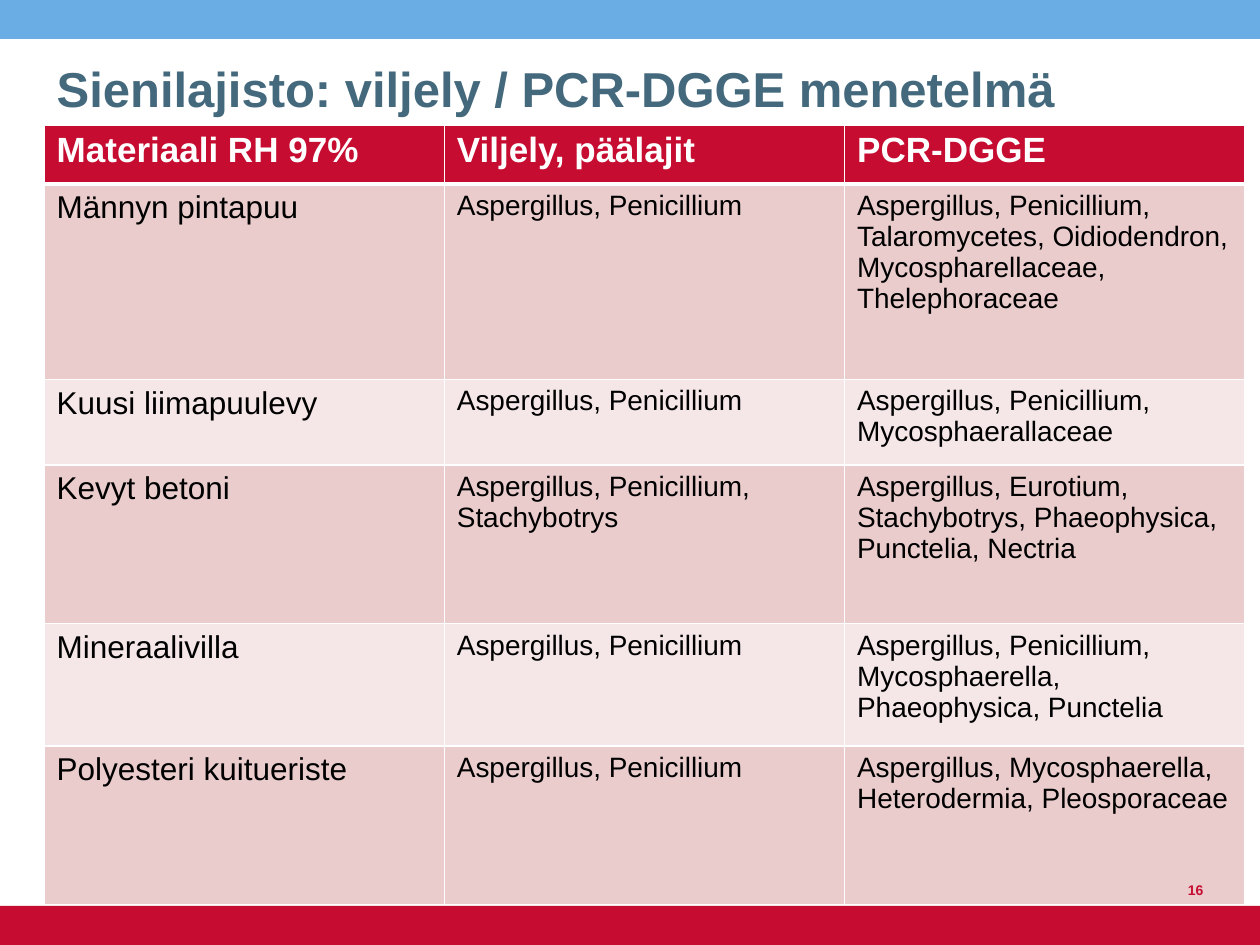
"""Builds a slide comparing fungal species found by culture and by PCR-DGGE."""
from lxml.etree import SubElement
from pptx import Presentation
from pptx.dml.color import RGBColor
from pptx.enum.shapes import MSO_SHAPE
from pptx.enum.text import MSO_ANCHOR, MSO_AUTO_SIZE, PP_ALIGN
from pptx.oxml.ns import qn
from pptx.util import Inches, Pt

RED, BLUE, SLATE = "C60C30", "6AADE4", "44697D"
WHITE, BLACK = "FFFFFF", "000000"
BANDS = ("EACCCD", "F5E7E8")
ROWS = [
    ("Materiaali RH 97%", "Viljely, päälajit", "PCR-DGGE"),
    ("Männyn pintapuu", "Aspergillus, Penicillium",
     "Aspergillus, Penicillium, Talaromycetes, Oidiodendron, "
     "Mycospharellaceae, Thelephoraceae"),
    ("Kuusi liimapuulevy", "Aspergillus, Penicillium",
     "Aspergillus, Penicillium, Mycosphaerallaceae"),
    ("Kevyt betoni", "Aspergillus, Penicillium, Stachybotrys",
     "Aspergillus, Eurotium, Stachybotrys, Phaeophysica, Punctelia, Nectria"),
    ("Mineraalivilla", "Aspergillus, Penicillium",
     "Aspergillus, Penicillium, Mycosphaerella, Phaeophysica, Punctelia"),
    ("Polyesteri kuitueriste", "Aspergillus, Penicillium",
     "Aspergillus, Mycosphaerella, Heterodermia, Pleosporaceae"),
]
ROW_HEIGHTS = (6.27, 20.67, 9.07, 16.8, 12.93, 16.8)


def rgb(value):
    return RGBColor.from_string(value)


class Deck:
    def __init__(self, font="Arial"):
        self.font = font
        self.prs = Presentation()
        self.prs.slide_width, self.prs.slide_height = Inches(10), Inches(7.5)
        self.s = self.prs.slides.add_slide(self.prs.slide_layouts[5])

    def x(self, share):
        return int(self.prs.slide_width * share / 100)

    def y(self, share):
        return int(self.prs.slide_height * share / 100)

    def box(self, left, top, width, height):
        return self.x(left), self.y(top), self.x(width), self.y(height)

    def set_text(self, tf, text, size, color, bold=False, align=PP_ALIGN.LEFT):
        tf.text = text
        tf.word_wrap = True
        p = tf.paragraphs[0]
        p.alignment = align
        f = p.runs[0].font
        f.name, f.size, f.bold = self.font, Pt(size), bold
        f.color.rgb = rgb(color)

    def bar(self, top, height, color):
        sp = self.s.shapes.add_shape(MSO_SHAPE.RECTANGLE, *self.box(0, top, 100, height))
        sp.shadow.inherit = False
        sp.fill.solid()
        sp.fill.fore_color.rgb = rgb(color)
        sp.line.fill.background()

    def title(self, text, *place):
        sp = self.s.shapes.title
        sp.left, sp.top, sp.width, sp.height = self.box(*place)
        self.set_text(sp.text_frame, text, 28, SLATE, bold=True)
        sp.text_frame.auto_size = MSO_AUTO_SIZE.NONE
        sp.text_frame.vertical_anchor = MSO_ANCHOR.BOTTOM

    def number(self, text, *place):
        tf = self.s.shapes.add_textbox(*self.box(*place)).text_frame
        self.set_text(tf, text, 8, RED, bold=True, align=PP_ALIGN.RIGHT)
        tf.vertical_anchor = MSO_ANCHOR.BOTTOM

    def borders(self, cell, bottom):
        tcPr = cell._tc.get_or_add_tcPr()
        for side, width in (("L", 1), ("R", 1), ("T", 1), ("B", bottom)):
            ln = SubElement(tcPr, qn(f"a:ln{side}"), w=str(Pt(width)))
            fill = SubElement(ln, qn("a:solidFill"))
            SubElement(fill, qn("a:srgbClr"), val=WHITE)

    def table(self, rows, heights, left, top, width):
        place = self.box(left, top, width, sum(heights))
        tbl = self.s.shapes.add_table(len(rows), len(rows[0]), *place).table
        for row, height in zip(tbl.rows, heights):
            row.height = self.y(height)
        for i, row in enumerate(rows):
            for j, text in enumerate(row):
                cell, head = tbl.cell(i, j), i == 0
                size = 20 if head else 18 if j == 0 else 16
                self.set_text(cell.text_frame, text, size, WHITE if head else BLACK, head)
                self.borders(cell, 3 if head else 1)
                cell.fill.solid()
                cell.fill.fore_color.rgb = rgb(RED if head else BANDS[(i - 1) % 2])


def main():
    deck = Deck()
    deck.bar(0, 4.13, BLUE)
    deck.bar(95.87, 4.13, RED)
    deck.title("Sienilajisto: viljely / PCR-DGGE menetelmä", 3.5, 1.47, 100, 11.6)
    deck.table(ROWS, ROW_HEIGHTS, 3.5, 13.2, 95.3)
    deck.number("16", 91, 90.4, 5.5, 5.33)
    deck.prs.save("out.pptx")


if __name__ == "__main__":
    main()
